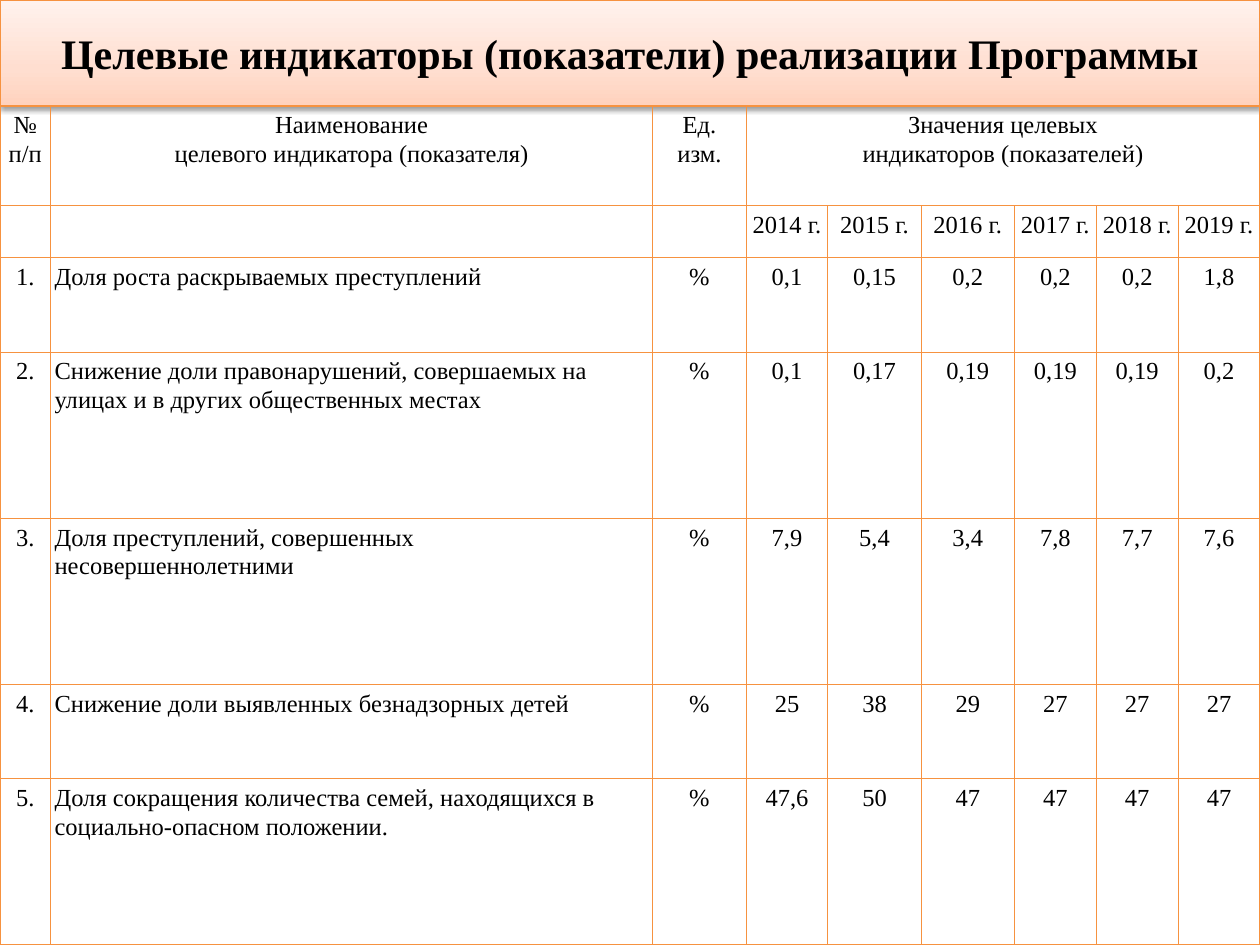
from dataclasses import dataclass

from lxml import etree
from pptx import Presentation
from pptx.dml.color import RGBColor
from pptx.enum.text import MSO_ANCHOR, PP_ALIGN
from pptx.oxml import parse_xml
from pptx.oxml.ns import nsdecls, qn
from pptx.slide import Slide
from pptx.table import _Cell
from pptx.util import Cm, Pt

CENTER, LEFT = PP_ALIGN.CENTER, PP_ALIGN.LEFT
MIDDLE, TOP = MSO_ANCHOR.MIDDLE, MSO_ANCHOR.TOP
TITLE_ONLY = 5


@dataclass(frozen=True)
class Theme:
    font: str = "Times New Roman"
    title_size: float = 24
    body_size: float = 14
    line_width: float = 0.75
    line_spacing: float = 1.07
    text: str = "000000"
    line: str = "F69240"
    shadow: str = "000000"
    gradient: tuple[tuple[int, str], ...] = (
        (0, "FFD2BD"), (35, "FFDED0"), (100, "FFF2ED"))


@dataclass(frozen=True)
class Indicator:
    name: str
    values: tuple[str, ...]
    height: float
    unit: str = "%"


THEME = Theme()
SLIDE_W, SLIDE_H = 25.4, 19.05
TITLE_H = 2.14
CELL_MARGIN = 0.08
COL_WIDTHS = (1.02, 12.14, 1.88, 1.65, 1.88, 1.88, 1.65, 1.65, 1.65)
HEADER_HEIGHTS = (2.01, 1.05)
FIRST_YEAR_COL = 3
NAME_COL = 1
TITLE = "Целевые индикаторы (показатели) реализации Программы"
HEADERS = (
    "№\nп/п",
    "Наименование\nцелевого индикатора (показателя)",
    "Ед.\nизм.",
    "Значения целевых\nиндикаторов (показателей)",
)
YEARS = tuple(f"{year} г." for year in range(2014, 2020))
INDICATORS = (
    Indicator("Доля роста раскрываемых преступлений",
              ("0,1", "0,15", "0,2", "0,2", "0,2", "1,8"), 1.9),
    Indicator("Снижение доли правонарушений, совершаемых на улицах "
              "и в других общественных местах",
              ("0,1", "0,17", "0,19", "0,19", "0,19", "0,2"), 3.35),
    Indicator("Доля преступлений, совершенных несовершеннолетними",
              ("7,9", "5,4", "3,4", "7,8", "7,7", "7,6"), 3.35),
    Indicator("Снижение доли выявленных безнадзорных детей",
              ("25", "38", "29", "27", "27", "27"), 1.9),
    Indicator("Доля сокращения количества семей, находящихся в "
              "социально-опасном положении.",
              ("47,6", "50", "47", "47", "47", "47"), 3.35),
)


def style_text(tf, size: float, align: PP_ALIGN, bold: bool = False) -> None:
    for p in tf.paragraphs:
        p.alignment = align
        p.font.name = THEME.font
        p.font.size = Pt(size)
        p.font.bold = bold
        p.font.color.rgb = RGBColor.from_string(THEME.text)


def draw_title(s: Slide) -> None:
    sp = s.shapes.title
    sp.left, sp.top, sp.width, sp.height = Cm(0), Cm(0), Cm(SLIDE_W), Cm(TITLE_H)
    sp.fill.gradient()
    sp.fill.gradient_angle = 90
    stops = sp.element.spPr.find(qn("a:gradFill")).find(qn("a:gsLst"))
    for stop in list(stops):
        stops.remove(stop)
    for position, color in THEME.gradient:
        stop = etree.SubElement(stops, qn("a:gs"), pos=str(position * 1000))
        etree.SubElement(stop, qn("a:srgbClr"), val=color)
    sp.line.color.rgb = RGBColor.from_string(THEME.line)
    sp.line.width = Pt(THEME.line_width)
    sp.element.spPr.append(parse_xml(
        f'<a:effectLst {nsdecls("a")}>'
        f'<a:outerShdw blurRad="{Pt(3.1)}" dist="{Pt(1.6)}" dir="5400000" rotWithShape="0">'
        f'<a:srgbClr val="{THEME.shadow}"><a:alpha val="38000"/></a:srgbClr>'
        '</a:outerShdw></a:effectLst>'))
    tf = sp.text_frame
    tf.text = TITLE
    tf.word_wrap = True
    tf.vertical_anchor = MIDDLE
    style_text(tf, THEME.title_size, CENTER, bold=True)


def format_cell(cell: _Cell, text: str, align: PP_ALIGN) -> None:
    cell.margin_left = cell.margin_right = Cm(CELL_MARGIN)
    cell.margin_top = cell.margin_bottom = Cm(CELL_MARGIN)
    cell.vertical_anchor = TOP
    tcPr = cell._tc.get_or_add_tcPr()
    for side in ("lnL", "lnR", "lnT", "lnB"):
        ln = etree.SubElement(tcPr, qn(f"a:{side}"), w=str(Pt(THEME.line_width)))
        fill = etree.SubElement(ln, qn("a:solidFill"))
        etree.SubElement(fill, qn("a:srgbClr"), val=THEME.line)
    cell.fill.background()
    tf = cell.text_frame
    tf.text = text
    for p in tf.paragraphs:
        p.line_spacing = THEME.line_spacing
    style_text(tf, THEME.body_size, align)


def draw_table(s: Slide) -> None:
    rows = [
        HEADERS + ("",) * (len(YEARS) - 1),
        ("",) * FIRST_YEAR_COL + YEARS,
        *((f"{n}.", item.name, item.unit, *item.values)
          for n, item in enumerate(INDICATORS, 1)),
    ]
    heights = (*HEADER_HEIGHTS, *(item.height for item in INDICATORS))
    table = s.shapes.add_table(
        len(rows), len(COL_WIDTHS), Cm(0), Cm(TITLE_H),
        Cm(SLIDE_W), Cm(sum(heights))).table
    table.first_row = table.horz_banding = False
    for column, width in zip(table.columns, COL_WIDTHS):
        column.width = Cm(width)
    for row, height in zip(table.rows, heights):
        row.height = Cm(height)
    for r, texts in enumerate(rows):
        for c, text in enumerate(texts):
            is_name = c == NAME_COL and r >= len(HEADER_HEIGHTS)
            format_cell(table.cell(r, c), text, LEFT if is_name else CENTER)
    table.cell(0, FIRST_YEAR_COL).merge(table.cell(0, len(COL_WIDTHS) - 1))


def main() -> None:
    prs = Presentation()
    prs.slide_width, prs.slide_height = Cm(SLIDE_W), Cm(SLIDE_H)
    s = prs.slides.add_slide(prs.slide_layouts[TITLE_ONLY])
    draw_title(s)
    draw_table(s)
    prs.save("out.pptx")


if __name__ == "__main__":
    main()
